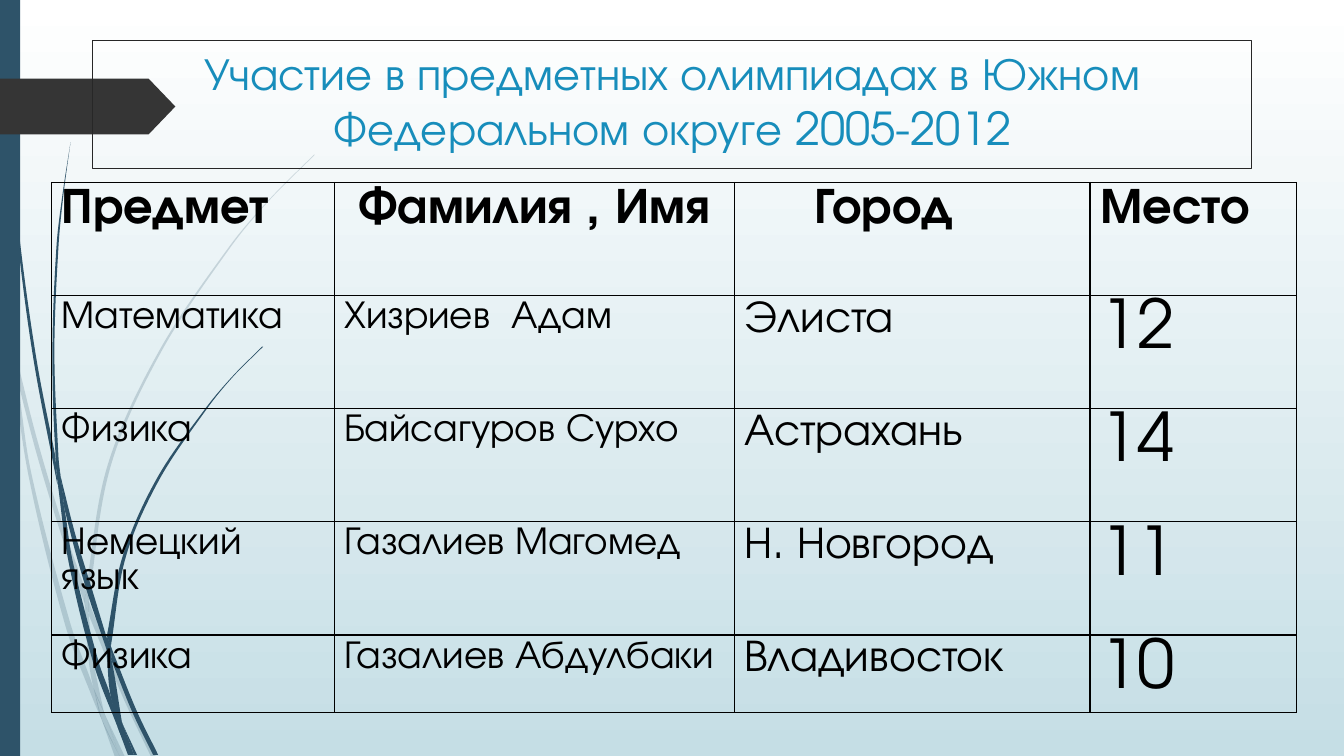
import lxml.etree
import pptx
import pptx.dml.color
import pptx.enum.shapes
import pptx.enum.text
import pptx.oxml.ns
import pptx.util
from pptx.util import Cm

RGBColor = pptx.dml.color.RGBColor
WHITE = RGBColor(0xFF, 0xFF, 0xFF)
PALE_BLUE = RGBColor(0xC5, 0xDE, 0xE5)
NAVY = RGBColor(0x2E, 0x53, 0x69)
CHARCOAL = RGBColor(0x35, 0x35, 0x35)
FRAME = RGBColor(0x27, 0x27, 0x27)
TITLE_BLUE = RGBColor(0x17, 0x8D, 0xBB)
BLACK = RGBColor(0, 0, 0)
FONT = "TeX Gyre Adventor"

PAGE_WIDTH, PAGE_HEIGHT = Cm(33.87), Cm(19.05)
INCH = Cm(2.54)
TITLE = "Участие в предметных олимпиадах в Южном Федеральном округе 2005-2012"
HEADINGS = ["Предмет", "Фамилия , Имя", "Город", "Место"]
RESULTS = [
    ["Математика", "Хизриев  Адам", "Элиста", "12"],
    ["Физика", "Байсагуров Сурхо", "Астрахань", "14"],
    ["Немецкий язык", "Газалиев Магомед", "Н. Новгород", "11"],
    ["Физика", "Газалиев Абдулбаки", "Владивосток", "10"],
]
COLUMN_WIDTHS = [7.12, 10.08, 8.97, 5.21]
ROW_HEIGHTS = [2.85, 2.85, 2.85, 2.85, 1.95]
RESULT_SIZES = [28, 28, 32, 48]
HEADING_SIZE = 36

# Grass blades: the two sides of each, from top to bottom, in inches
PALE_BLADES = [
    ([(0, 2.82), (.09, 3.22), (.11, 3.5)], [(0, 2.99), (.1, 3.44), (.11, 3.5)]),
    ([(.14, 3.45), (.36, 4.33), (.62, 5.2), (.85, 5.86)],
     [(.17, 3.76), (.36, 4.49), (.58, 5.22), (.84, 5.99)]),
    ([(.88, 5.96), (.92, 6.07), (1.27, 6.92), (1.55, 7.51)],
     [(.88, 6.1), (1.23, 6.94), (1.5, 7.51)]),
    ([(1.05, 7.11), (1.24, 7.51)], [(1.05, 7.11), (1.19, 7.51)]),
    ([(.11, 3.5), (.28, 4.7), (.65, 6.21), (.92, 6.93), (1.01, 7.14)],
     [(.11, 3.5), (.17, 3.76), (.31, 4.69), (.7, 6.19), (.93, 6.83), (1.01, 7.14)]),
    ([(.84, 5.99), (.87, 6.46), (.93, 6.83), (1.05, 7.11)],
     [(.84, 5.99), (.88, 6.1), (.91, 6.46), (1.03, 7.06), (1.05, 7.11)]),
    ([(3.12, 1.53), (2.68, 1.97), (2.28, 2.44), (1.58, 3.48), (1.07, 4.61), (.85, 5.86)],
     [(3.12, 1.54), (2.68, 1.98), (2.29, 2.45), (1.6, 3.49), (1.1, 4.62), (.88, 5.96)]),
    ([(1.01, 7.14), (1.14, 7.51)], [(1.01, 7.14), (1.19, 7.51)]),
    ([(.85, 5.86), (.88, 5.96), (.88, 6.1)], [(.85, 5.86), (.84, 5.99), (.88, 6.08)]),
    ([(.93, 6.83), (1.01, 7.14), (1.19, 7.51)], [(.93, 6.83), (1.05, 7.11), (1.19, 7.51)]),
]
DARK_BLADES = [
    ([(.03, 0), (.04, .48), (.07, 1.1), (.17, 2.33), (.33, 3.55), (.57, 4.81)],
     [(.04, 0), (.05, .48), (.08, 1.09), (.19, 2.32), (.36, 3.55), (.55, 4.53)]),
    ([(.6, 4.72), (.75, 5.31), (.93, 5.9), (1.06, 6.33)],
     [(.64, 5.05), (.75, 5.48), (.88, 5.92), (1.06, 6.45)]),
    ([(1.1, 6.41), (1.13, 6.49), (1.36, 7.06), (1.57, 7.49)],
     [(1.11, 6.56), (1.32, 7.08), (1.52, 7.49)]),
    ([(.57, 4.77), (.68, 5.57), (.93, 6.59), (1.17, 7.22)],
     [(.57, 4.77), (.64, 5.05), (.72, 5.56), (.98, 6.57), (1.1, 6.91), (1.17, 7.22)]),
    ([(.7, 1.41), (.62, 1.93), (.56, 2.45), (.52, 3.49), (.55, 4.49), (.6, 4.72)],
     [(.7, 1.41), (.63, 1.93), (.58, 2.45), (.54, 3.49), (.58, 4.53), (.6, 4.72)]),
    ([(1.22, 7.19), (1.33, 7.49)], [(1.22, 7.19), (1.36, 7.49)]),
    ([(.55, 4.49), (.57, 4.77), (.64, 5.05)], [(.55, 4.49), (.6, 4.72), (.64, 5.05)]),
    ([(2.6, 3.44), (2.31, 3.73), (2.04, 4.05), (1.56, 4.74), (1.22, 5.51), (1.06, 6.31)],
     [(2.61, 3.44), (2.31, 3.74), (2.05, 4.06), (1.58, 4.76), (1.25, 5.52), (1.1, 6.41)]),
    ([(1.17, 7.22), (1.27, 7.49)], [(1.17, 7.22), (1.31, 7.49)]),
    ([(1.06, 6.45), (1.1, 6.91), (1.22, 7.19)],
     [(1.06, 6.45), (1.11, 6.56), (1.21, 7.16), (1.22, 7.19)]),
    ([(1.06, 6.31), (1.06, 6.45), (1.11, 6.56)], [(1.06, 6.31), (1.1, 6.41), (1.11, 6.56)]),
    ([(1.1, 6.91), (1.17, 7.22), (1.3, 7.49)], [(1.1, 6.91), (1.22, 7.19), (1.33, 7.49)]),
]


def fill_plain(shape, color):
    shape.shadow.inherit = False
    shape.fill.solid()
    shape.fill.fore_color.rgb = color
    shape.line.fill.background()


def add_span(para, text, size, color, bold=False):
    span = para.add_run()
    span.text = text
    span.font.name, span.font.size = FONT, pptx.util.Pt(size)
    span.font.color.rgb, span.font.bold = color, bold


def curve_side(knots):
    """Bezier points of a smooth curve through the knots."""
    last = len(knots) - 1
    slopes = []
    for index in range(last + 1):
        before, after = knots[max(index - 1, 0)], knots[min(index + 1, last)]
        slopes.append((after[0] - before[0]) / (after[1] - before[1]))
    points = [knots[0]]
    for index in range(last):
        (x1, y1), (x2, y2) = knots[index:index + 2]
        third = (y2 - y1) / 3
        points += [(x1 + slopes[index] * third, y1 + third),
                   (x2 - slopes[index + 1] * third, y2 - third), (x2, y2)]
    return points


def add_blade(page, box, sides, opacity=None):
    left, top = box[:2]
    down, up = curve_side(sides[0]), curve_side(sides[1])[::-1]
    outline = [(left + max(x, 0) * INCH, top + y * INCH) for x, y in down + up]
    builder = page.shapes.build_freeform(*outline[0])
    builder.add_line_segments(outline[1:], close=True)
    blade = builder.convert_to_shape()
    # Every three points along a side become one curve
    steps = blade.element.findall(".//" + pptx.oxml.ns.qn("a:lnTo"))
    cap = len(down) - 1
    for side in (steps[:cap], steps[cap + 1:]):
        for first in range(0, len(side), 3):
            curve = lxml.etree.Element(pptx.oxml.ns.qn("a:cubicBezTo"))
            side[first].addprevious(curve)
            for step in side[first:first + 3]:
                curve.append(step[0])
                step.getparent().remove(step)
    fill_plain(blade, NAVY)
    if opacity is not None:
        color = blade.element.spPr.find(".//" + pptx.oxml.ns.qn("a:srgbClr"))
        lxml.etree.SubElement(color, pptx.oxml.ns.qn("a:alpha"), val=str(opacity * 1000))


def add_backdrop(page, box):
    left, top, width, height = box
    # Vertical gradient
    fill = page.background.fill
    fill.gradient()
    fill.gradient_angle = 270
    for stop, color, position in zip(fill.gradient_stops, (WHITE, PALE_BLUE), (0, 1)):
        stop.color.rgb, stop.position = color, position
    # Grass
    for sides in PALE_BLADES:
        add_blade(page, box, sides, opacity=20)
    for sides in DARK_BLADES:
        add_blade(page, box, sides)
    # Side band and arrow tag
    kinds = pptx.enum.shapes.MSO_SHAPE
    band = page.shapes.add_shape(kinds.RECTANGLE, left, top, Cm(0.51), height)
    fill_plain(band, NAVY)
    tag = page.shapes.add_shape(kinds.PENTAGON, left, top + Cm(1.98), Cm(4.42), Cm(1.41))
    tag.adjustments[0] = 0.48
    fill_plain(tag, CHARCOAL)


def place_title(page, box):
    title = page.shapes.title
    title.element.getparent().append(title.element)  # in front of the backdrop
    title.left, title.top, title.width, title.height = box
    title.line.color.rgb, title.line.width = FRAME, pptx.util.Pt(0.75)
    frame = title.text_frame
    frame.word_wrap = True
    frame.auto_size = pptx.enum.text.MSO_AUTO_SIZE.NONE
    frame.vertical_anchor = pptx.enum.text.MSO_ANCHOR.TOP
    para = frame.paragraphs[0]
    para.alignment = pptx.enum.text.PP_ALIGN.CENTER
    add_span(para, TITLE, 32.4, TITLE_BLUE)


def format_cell(cell):
    properties = cell._tc.get_or_add_tcPr()
    for side in ("a:lnL", "a:lnR", "a:lnT", "a:lnB"):
        line = lxml.etree.SubElement(properties, pptx.oxml.ns.qn(side), w=str(pptx.util.Pt(1)))
        solid = lxml.etree.SubElement(line, pptx.oxml.ns.qn("a:solidFill"))
        lxml.etree.SubElement(solid, pptx.oxml.ns.qn("a:srgbClr"), val=str(BLACK))
    cell.fill.background()


def add_results(page, box):
    rows = [HEADINGS] + RESULTS
    table = page.shapes.add_table(len(rows), len(HEADINGS), *box).table
    table.first_row = table.horz_banding = False
    for column, width in zip(table.columns, COLUMN_WIDTHS):
        column.width = Cm(width)
    for row, height in zip(table.rows, ROW_HEIGHTS):
        row.height = Cm(height)
    for r, texts in enumerate(rows):
        for c, text in enumerate(texts):
            cell = table.cell(r, c)
            format_cell(cell)
            para = cell.text_frame.paragraphs[0]
            para.line_spacing = 0.96
            size = RESULT_SIZES[c] if r else HEADING_SIZE
            add_span(para, text, size, BLACK, bold=r == 0)
    # Heading alignment
    table.cell(0, 1).text_frame.paragraphs[0].alignment = pptx.enum.text.PP_ALIGN.CENTER
    table.cell(0, 2).margin_left = Cm(2.03)


def main():
    deck = pptx.Presentation()
    deck.slide_width, deck.slide_height = PAGE_WIDTH, PAGE_HEIGHT
    page = deck.slides.add_slide(deck.slide_layouts.get_by_name("Title Only"))
    add_backdrop(page, (0, 0, PAGE_WIDTH, PAGE_HEIGHT))
    place_title(page, (Cm(2.34), Cm(1.02), Cm(29.21), Cm(3.22)))
    add_results(page, (Cm(1.3), Cm(4.6), Cm(sum(COLUMN_WIDTHS)), Cm(sum(ROW_HEIGHTS))))
    deck.save("out.pptx")


if __name__ == "__main__":
    main()
